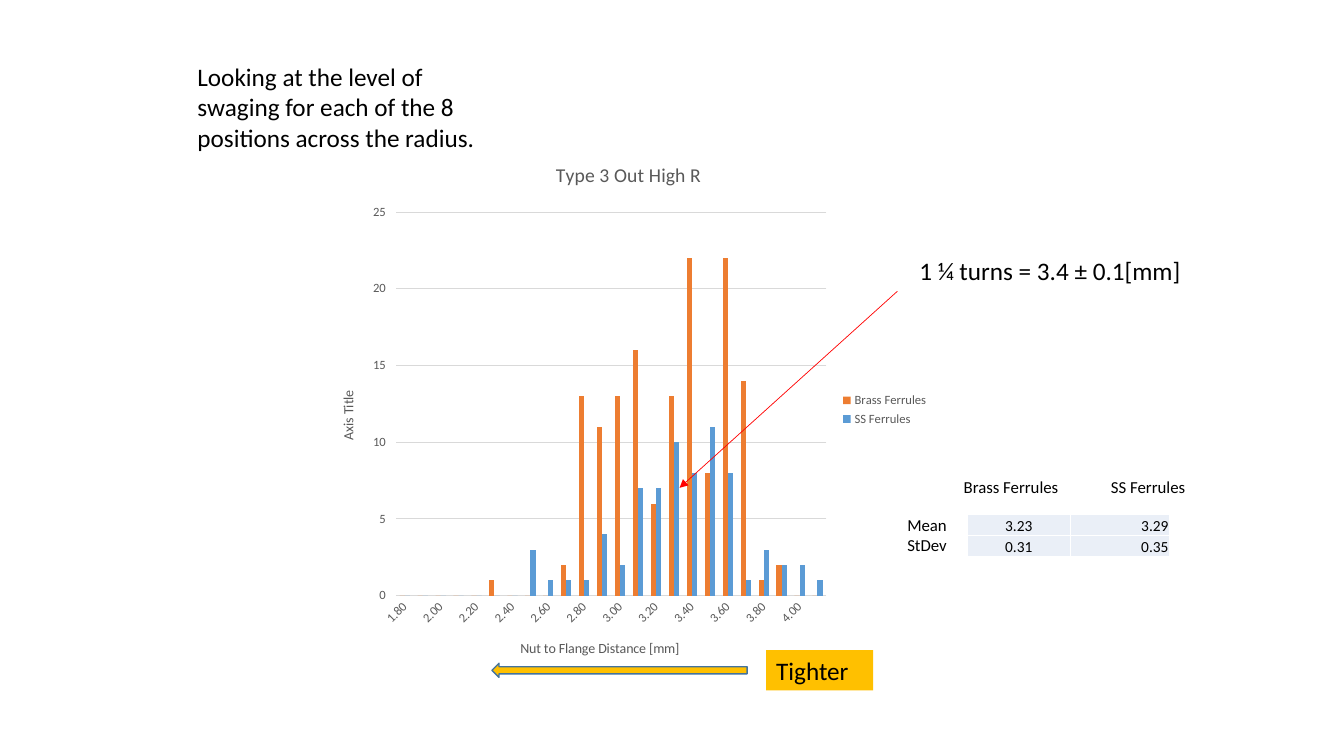
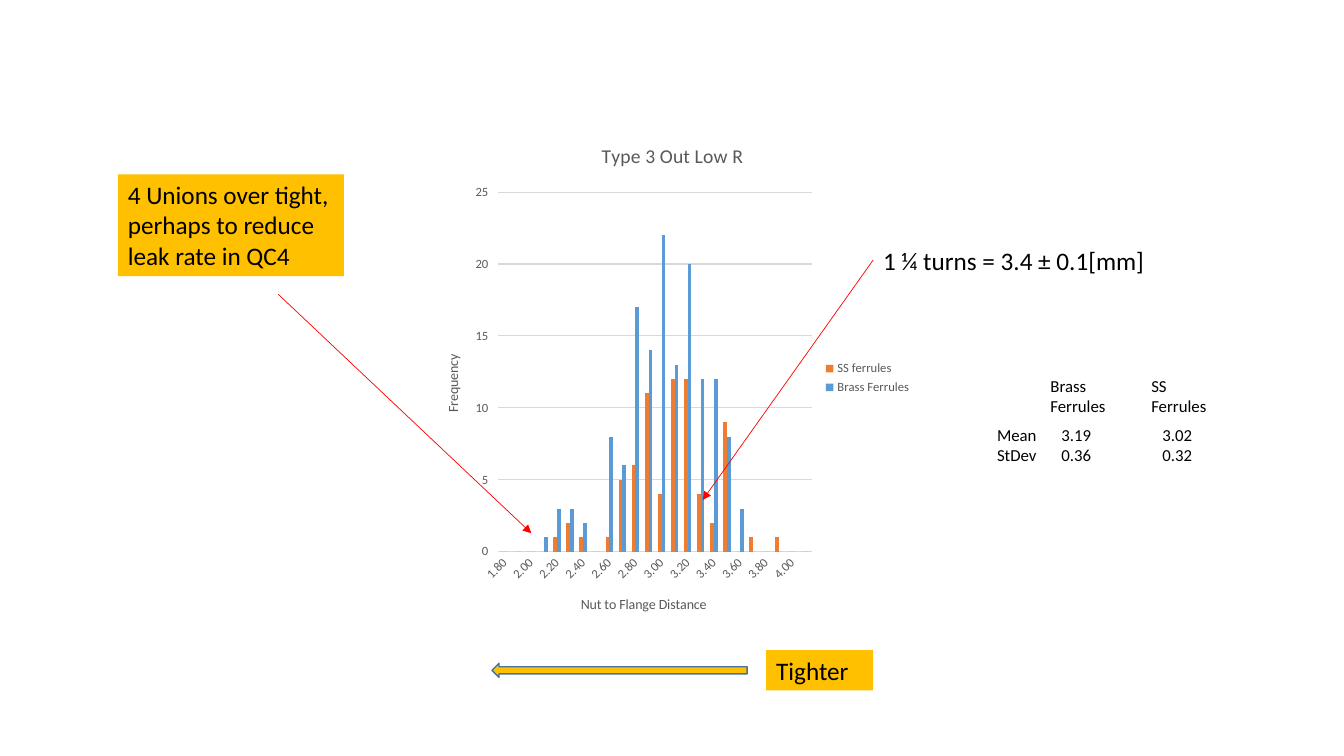
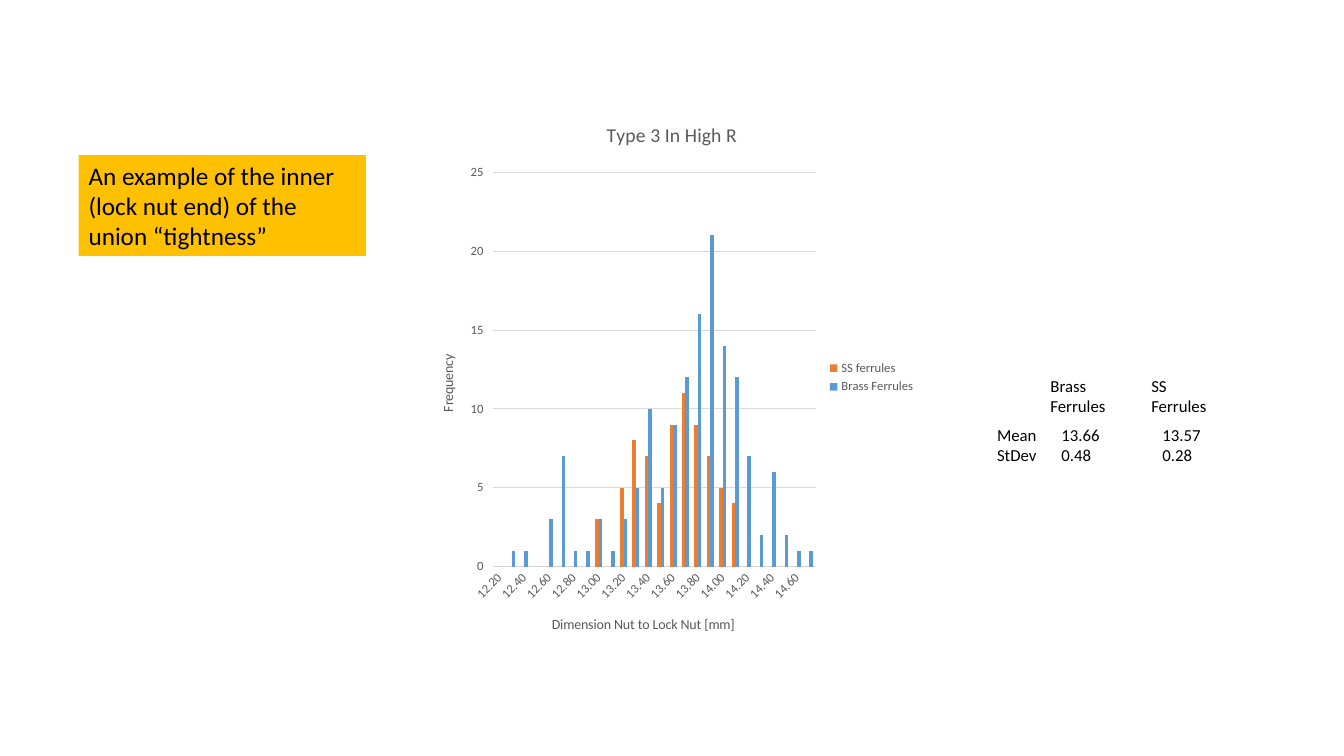
from dataclasses import dataclass

from lxml import etree
from pptx import Presentation
from pptx.chart.data import CategoryChartData as Data
from pptx.dml.color import RGBColor as Rgb
from pptx.enum.chart import XL_CHART_TYPE as Kind
from pptx.enum.chart import XL_LEGEND_POSITION as Side
from pptx.enum.chart import XL_TICK_MARK as Tick
from pptx.enum.shapes import MSO_CONNECTOR as Conn
from pptx.enum.shapes import MSO_SHAPE as Shape
from pptx.enum.text import MSO_ANCHOR as Anchor
from pptx.enum.text import MSO_AUTO_SIZE as Auto
from pptx.enum.text import PP_ALIGN as Align
from pptx.oxml.ns import qn
from pptx.util import Inches, Pt


@dataclass(frozen=True)
class Theme:
    font: str = "Calibri"
    ink: str = "000000"
    paper: str = "FFFFFF"
    gray: str = "595959"
    grid: str = "D9D9D9"
    gold: str = "FFC000"
    edge: str = "43739E"
    red: str = "FF0000"
    cell: str = "EAEFF7"
    bars: tuple = ("ED7D31", "5B9BD5")
    note: int = 18
    head: int = 14
    stat: int = 12
    grain: int = 11
    axis: int = 10
    tick: int = 9


def sub(node, tag, **attrs):
    return etree.SubElement(node, qn(tag), attrs)


def inch(*nums):
    return [Inches(num) for num in nums]


class Deck:
    def __init__(self, theme):
        self.theme = theme
        self.prs = Presentation()
        self.prs.slide_width, self.prs.slide_height = inch(13.33, 7.5)
        self.slide = None

    def new(self):
        self.slide = self.prs.slides.add_slide(self.prs.slide_layouts[6])

    def style(self, font, size, color):
        font.name = self.theme.font
        font.size = Pt(size)
        font.bold = False
        font.color.rgb = Rgb.from_string(color)

    def paint(self, item, color):
        item.fill.solid()
        item.fill.fore_color.rgb = Rgb.from_string(color)

    def stroke(self, line, color, width):
        line.color.rgb = Rgb.from_string(color)
        line.width = Pt(width)

    # Text box, with an optional fill and a tab stop in inches
    def text(self, words, box, size, fill=None, stop=None):
        shape = self.slide.shapes.add_textbox(*inch(*box))
        if fill:
            self.paint(shape, fill)
        frame = shape.text_frame
        frame.word_wrap = True
        frame.auto_size = Auto.SHAPE_TO_FIT_TEXT
        frame.text = words
        for para in frame.paragraphs:
            for run in para.runs:
                self.style(run.font, size, self.theme.ink)
            if stop:
                tabs = sub(para._p.get_or_add_pPr(), "a:tabLst")
                sub(tabs, "a:tab", pos=str(Inches(stop)), algn="l")

    def note(self, words, *box):
        self.text(words, box, self.theme.note)

    def flag(self, words, *box):
        self.text(words, box, self.theme.note, self.theme.gold)

    def stat(self, words, *box, stop=None):
        self.text(words, box, self.theme.stat, stop=stop)

    # Red pointer with an arrowhead at its end
    def point(self, start, end):
        line = self.slide.shapes.add_connector(
            Conn.STRAIGHT, *inch(*start, *end))
        self.stroke(line.line, self.theme.red, 0.5)
        sub(line.line._get_or_add_ln(), "a:tailEnd", type="triangle")
        sub(line._element.spPr, "a:effectLst")

    # Arrow under the chart with its label
    def tight(self):
        arrow = self.slide.shapes.add_shape(
            Shape.LEFT_ARROW, *inch(4.88, 6.58, 2.53, 0.14))
        arrow.shadow.inherit = False
        self.paint(arrow, self.theme.gold)
        self.stroke(arrow.line, self.theme.edge, 1)
        self.flag("Tighter", 7.6, 6.45, 1.06, 0.4)

    # Mean and deviation block at the right
    def stats(self, mean, dev):
        self.stat("Brass Ferrules", 10.32, 3.68, 0.77, 0.5)
        self.stat("SS Ferrules", 11.32, 3.68, 0.81, 0.5)
        self.stat("Mean\nStDev", 9.79, 4.16, 0.81, 0.5)
        rows = "\n".join("\t".join(row) for row in (mean, dev))
        self.stat(rows, 10.43, 4.16, 1.8, 0.5, stop=1)

    def table(self, rows, box, widths):
        theme = self.theme
        grid = self.slide.shapes.add_table(
            len(rows), len(widths), *inch(*box)).table
        grid.first_row = grid.horz_banding = False
        for col, width in zip(grid.columns, widths):
            col.width = Inches(width)
        for r, row in enumerate(rows):
            for c, value in enumerate(row):
                cell = grid.cell(r, c)
                cell.text = value
                cell.vertical_anchor = Anchor.BOTTOM
                cell.margin_left = cell.margin_right = Inches(0.01)
                cell.margin_top, cell.margin_bottom = inch(0.01, 0)
                para = cell.text_frame.paragraphs[0]
                para.alignment = (Align.CENTER, Align.RIGHT)[c]
                self.style(para.runs[0].font, theme.grain, theme.ink)
                for side in "LRTB":
                    edge = sub(cell._tc.get_or_add_tcPr(), "a:ln" + side,
                               w=str(Pt(1)))
                    sub(sub(edge, "a:solidFill"), "a:srgbClr", val=theme.paper)
                self.paint(cell, theme.cell)

    def label(self, owner, words, size):
        para = owner.text_frame.paragraphs[0]
        para.text = words
        self.style(para.runs[0].font, size, self.theme.gray)

    # Histogram with bins 0.1 wide
    def chart(self, title, names, box, first, series):
        theme = self.theme
        data = Data(number_format="General")
        count = len(series[0][1])
        data.categories = [round(first + i / 10, 1) for i in range(count)]
        data.categories.number_format = "0.00"
        for name, values in series:
            data.add_series(name, values)
        chart = self.slide.shapes.add_chart(
            Kind.COLUMN_CLUSTERED, *inch(*box), data).chart
        self.style(chart.font, theme.axis, theme.ink)
        chart.has_title = True
        self.label(chart.chart_title, title, theme.head)

        chart.has_legend = True
        chart.legend.position = Side.RIGHT
        chart.legend.include_in_layout = False
        self.style(chart.legend.font, theme.tick, theme.gray)

        plot = chart.plots[0]
        plot.gap_width, plot.overlap = 150, 0
        plot.vary_by_categories = False
        for bars, color in zip(plot.series, theme.bars):
            self.paint(bars.format, color)
            bars.invert_if_negative = False

        cat, val = chart.category_axis, chart.value_axis
        for axis, name in zip((cat, val), names):
            self.label(axis.axis_title, name, theme.axis)
            self.style(axis.tick_labels.font, theme.tick, theme.gray)
        cat.major_tick_mark = Tick.NONE
        cat.tick_labels.number_format = "0.00"
        cat.tick_labels.number_format_is_linked = False
        self.stroke(cat.format.line, theme.grid, 0.75)
        for body in chart.element.xpath(".//c:catAx/c:txPr/a:bodyPr"):
            body.set("rot", "-60000000")
            body.set("vert", "horz")
        val.minimum_scale, val.maximum_scale, val.major_unit = 0, 25, 5
        val.major_tick_mark = Tick.OUTSIDE
        val.format.line.fill.background()
        val.has_major_gridlines = True
        self.stroke(val.major_gridlines.format.line, theme.grid, 0.75)


def main():
    deck = Deck(Theme())
    turns = "1 ¼ turns = 3.4 ± 0.1[mm]"

    # Outer end, high radius
    deck.new()
    deck.chart(
        "Type 3 Out High R", ("Nut to Flange Distance [mm]", "Axis Title"),
        (3.16, 1.41, 6.15, 5.31), 1.8,
        [("Brass Ferrules", [0, 0, 0, 0, 0, 1, 0, 0, 0, 2, 13, 11, 13, 16, 6,
                             13, 22, 8, 22, 14, 1, 2, 0, 0]),
         ("SS Ferrules", [0, 0, 0, 0, 0, 0, 0, 3, 1, 1, 1, 4, 2, 7, 7,
                          10, 8, 11, 8, 1, 3, 2, 2, 1])])
    deck.note("Looking at the level of swaging for each of the 8 positions "
              "across the radius.", 1.86, 0.56, 3.14, 1.01)
    deck.table([("3.23", "3.29"), ("0.31", "0.35")],
               (9.59, 5.1, 2.01, 0.42), (1.03, 0.98))
    deck.stat("Brass Ferrules", 9.46, 4.68, 1.4, 0.3)
    deck.stat("SS Ferrules", 10.92, 4.68, 1.15, 0.3)
    deck.stat("Mean\nStDev", 8.9, 5.06, 0.81, 0.5)
    deck.tight()
    deck.note(turns, 9.02, 2.48, 3.17, 0.4)
    deck.point((8.9, 2.89), (6.74, 4.84))

    # Outer end, low radius
    deck.new()
    deck.chart(
        "Type 3 Out Low R", ("Nut to Flange Distance", "Frequency"),
        (4.2, 1.22, 4.94, 5.06), 1.8,
        [("SS ferrules", [0, 0, 0, 0, 1, 2, 1, 0, 1, 5, 6, 11, 4, 12, 12,
                          4, 2, 9, 0, 1, 0, 1, 0, 0]),
         ("Brass Ferrules", [0, 0, 0, 1, 3, 3, 2, 0, 8, 6, 17, 14, 22, 13, 20,
                             12, 12, 8, 3, 0, 0, 0, 0, 0])])
    deck.tight()
    deck.note(turns, 8.66, 2.38, 3.17, 0.4)
    deck.point((8.66, 2.58), (6.97, 4.96))
    deck.stats(("3.19", "3.02"), ("0.36", "0.32"))
    deck.flag("4 Unions over tight, perhaps to reduce leak rate in QC4",
              1.17, 1.73, 2.24, 1.01)
    deck.point((2.76, 2.92), (5.27, 5.29))

    # Inner end, high radius
    deck.new()
    deck.chart(
        "Type 3 In High R", ("Dimension Nut to Lock Nut [mm]", "Frequency"),
        (4.15, 1.01, 5.03, 5.47), 12.2,
        [("SS ferrules", [0, 0, 0, 0, 0, 0, 0, 0, 3, 0, 5, 8, 7, 4, 9,
                          11, 9, 7, 5, 4, 0, 0, 0, 0, 0, 0]),
         ("Brass Ferrules", [0, 1, 1, 0, 3, 7, 1, 1, 3, 1, 3, 5, 10, 5, 9,
                             12, 16, 21, 14, 12, 7, 2, 6, 2, 1, 1])])
    deck.flag("An example of the inner (lock nut end) of the union “tightness”",
              0.78, 1.54, 2.85, 1)
    deck.stats(("13.66", "13.57"), ("0.48", "0.28"))

    deck.prs.save("out.pptx")


if __name__ == "__main__":
    main()
